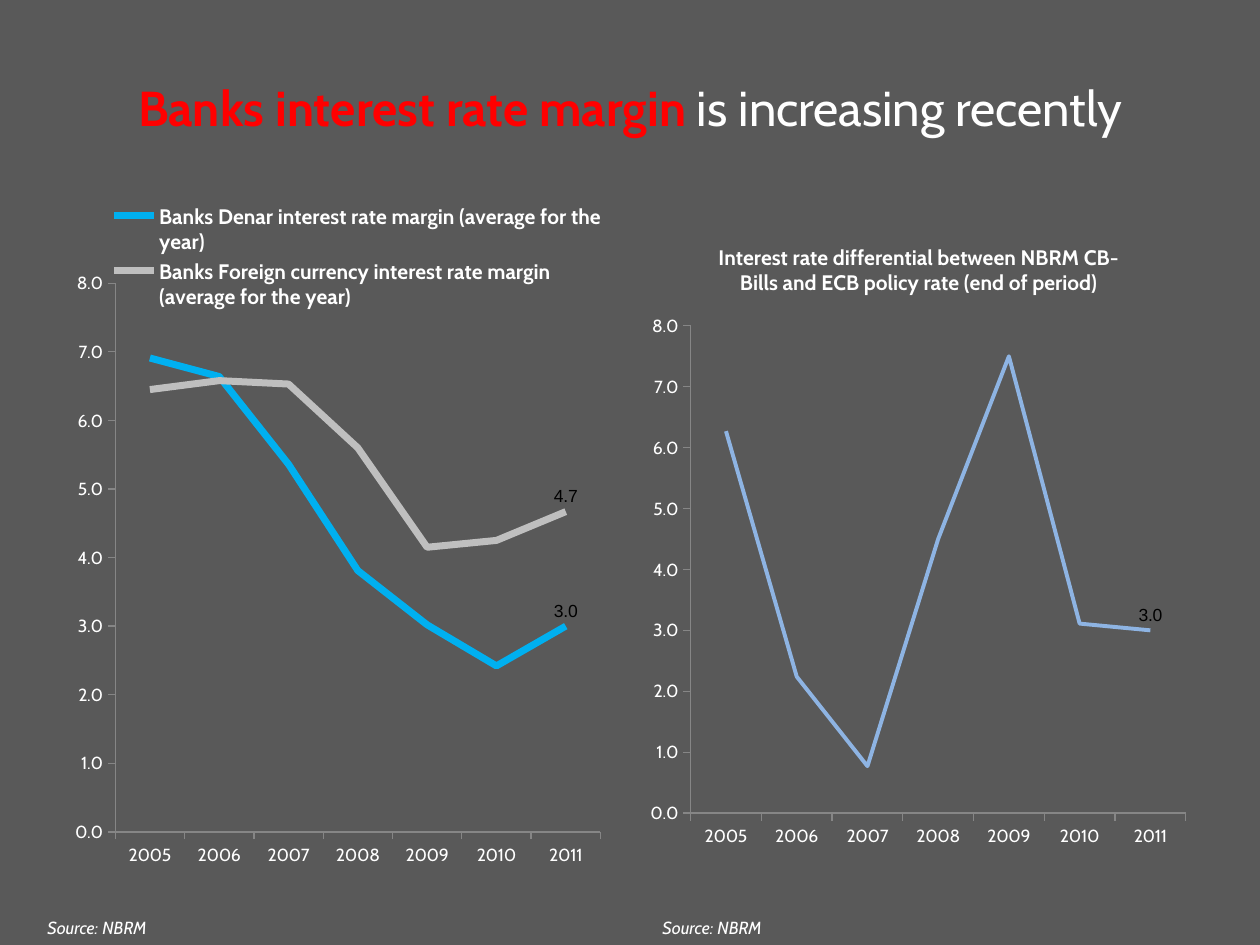
from pptx import Presentation
from pptx.chart.data import CategoryChartData
from pptx.dml.color import RGBColor
from pptx.enum.chart import XL_CHART_TYPE, XL_LABEL_POSITION, XL_LEGEND_POSITION, XL_TICK_MARK
from pptx.enum.text import MSO_ANCHOR, PP_ALIGN
from pptx.oxml import parse_xml
from pptx.oxml.ns import nsdecls, qn
from pptx.util import Pt

LINE = XL_CHART_TYPE.LINE
ABOVE = XL_LABEL_POSITION.ABOVE
BOTTOM = XL_LEGEND_POSITION.BOTTOM
TICK_OUT = XL_TICK_MARK.OUTSIDE
CENTER, LEFT, MIDDLE = PP_ALIGN.CENTER, PP_ALIGN.LEFT, MSO_ANCHOR.MIDDLE

THEME = dict(font="Cabin", label_font="Arial", bg="595959", text="FFFFFF", accent="FF0000",
             label="000000", axis="868686", title=28, head=12, small=10)

# Content
TITLE = [("Banks interest rate margin ", dict(color=THEME["accent"], bold=True)),
         ("is increasing recently", {})]
YEARS = ["2005", "2006", "2007", "2008", "2009", "2010", "2011"]
CHARTS = [
    dict(box=(366, 126, 318, 365), plot=(0.09, 0.165, 0.89, 0.763), weight=2.25,
         title="Interest rate differential between NBRM CB-Bills and ECB policy rate (end of period)",
         series=[("Series 1", "8EB4E3", [6.27, 2.24, 0.77, 4.5, 7.5, 3.11, 3])]),
    dict(box=(36, 106, 318, 391), plot=(0.094, 0.143, 0.872, 0.802), weight=4,
         legend=(0.075, 0.02, 0.91, 0.17),
         series=[("Banks Denar interest rate margin (average for the year)", "00B0F0",
                  [6.91, 6.64, 5.36, 3.81, 3.02, 2.42, 3]),
                 ("Banks Foreign currency interest rate margin (average for the year)", "BFBFBF",
                  [6.45, 6.58, 6.53, 5.6, 4.15, 4.25, 4.67])]),
]
SOURCE = "Source: NBRM"
SOURCE_LEFTS = [20, 371.5]


def style(font, size, color=THEME["text"], name=THEME["font"], bold=False, italic=False):
    font.name, font.size, font.bold, font.italic = name, Pt(size), bold, italic
    font.color.rgb = RGBColor.from_string(color)


def add_text(tf, runs, size, align=LEFT, **fmt):
    p = tf.paragraphs[0]
    p.alignment = align
    for text, extra in runs:
        r = p.add_run()
        r.text = text
        style(r.font, size, **{**fmt, **extra})


def set_layout(parent, index, box, inner=False):
    """Place a chart part by fractions of the chart area."""
    for old in parent.findall(qn("c:layout")):
        parent.remove(old)
    target = '<c:layoutTarget val="inner"/>' if inner else ""
    modes = '<c:xMode val="edge"/><c:yMode val="edge"/>'
    sizes = "".join(f'<c:{k} val="{v}"/>' for k, v in zip("xywh", box))
    parent.insert(index, parse_xml(
        f'<c:layout {nsdecls("c")}><c:manualLayout>{target}{modes}{sizes}'
        '</c:manualLayout></c:layout>'))


def add_line_chart(s, spec_):
    data = CategoryChartData(number_format="0.0")
    data.categories = YEARS
    for name, _, values in spec_["series"]:
        data.add_series(name, values)
    chart = s.shapes.add_chart(LINE, *map(Pt, spec_["box"]), data).chart
    style(chart.font, THEME["small"])

    # Title and legend
    chart.has_title = "title" in spec_
    if chart.has_title:
        add_text(chart.chart_title.text_frame, [(spec_["title"], {})], THEME["head"],
                 align=CENTER, bold=True)
    chart.has_legend = "legend" in spec_
    if chart.has_legend:
        legend = chart.legend
        legend.position = BOTTOM
        legend.include_in_layout = False
        style(legend.font, THEME["head"], bold=True)
        set_layout(legend._element, 1, spec_["legend"])

    # Axes
    for axis in (chart.category_axis, chart.value_axis):
        axis.has_major_gridlines = False
        axis.major_tick_mark = TICK_OUT
        axis.format.line.width = Pt(0.75)
        axis.format.line.color.rgb = RGBColor.from_string(THEME["axis"])
    values_axis = chart.value_axis
    values_axis.minimum_scale, values_axis.maximum_scale, values_axis.major_unit = 0, 8, 1
    values_axis.tick_labels.number_format = "0.0"
    values_axis.tick_labels.number_format_is_linked = False

    # Lines, each with its last value labelled
    plot = chart.plots[0]
    plot.vary_by_categories = False
    for series, (_, color, _) in zip(plot.series, spec_["series"]):
        series.smooth = False
        series.format.line.width = Pt(spec_["weight"])
        series.format.line.color.rgb = RGBColor.from_string(color)
        label = series.points[len(YEARS) - 1].data_label
        style(label.font, THEME["small"], THEME["label"], THEME["label_font"])
        label.position = ABOVE
    set_layout(chart._chartSpace.chart.plotArea, 0, spec_["plot"], inner=True)


def main():
    prs = Presentation()
    prs.slide_width, prs.slide_height = Pt(720), Pt(540)
    s = prs.slides.add_slide(prs.slide_layouts[5])
    s.background.fill.solid()
    s.background.fill.fore_color.rgb = RGBColor.from_string(THEME["bg"])

    # Title
    title = s.shapes.title
    title.left, title.top, title.width, title.height = map(Pt, (36, 21.6, 648, 78.5))
    title.text_frame.vertical_anchor = MIDDLE
    add_text(title.text_frame, TITLE, THEME["title"], align=CENTER)

    # Charts
    for chart in CHARTS:
        add_line_chart(s, chart)

    # Sources
    for left in SOURCE_LEFTS:
        tf = s.shapes.add_textbox(Pt(left), Pt(520.6), Pt(113), Pt(19.4)).text_frame
        tf.word_wrap = True
        add_text(tf, [(SOURCE, {})], THEME["small"], italic=True)

    prs.save("out.pptx")


if __name__ == "__main__":
    main()
